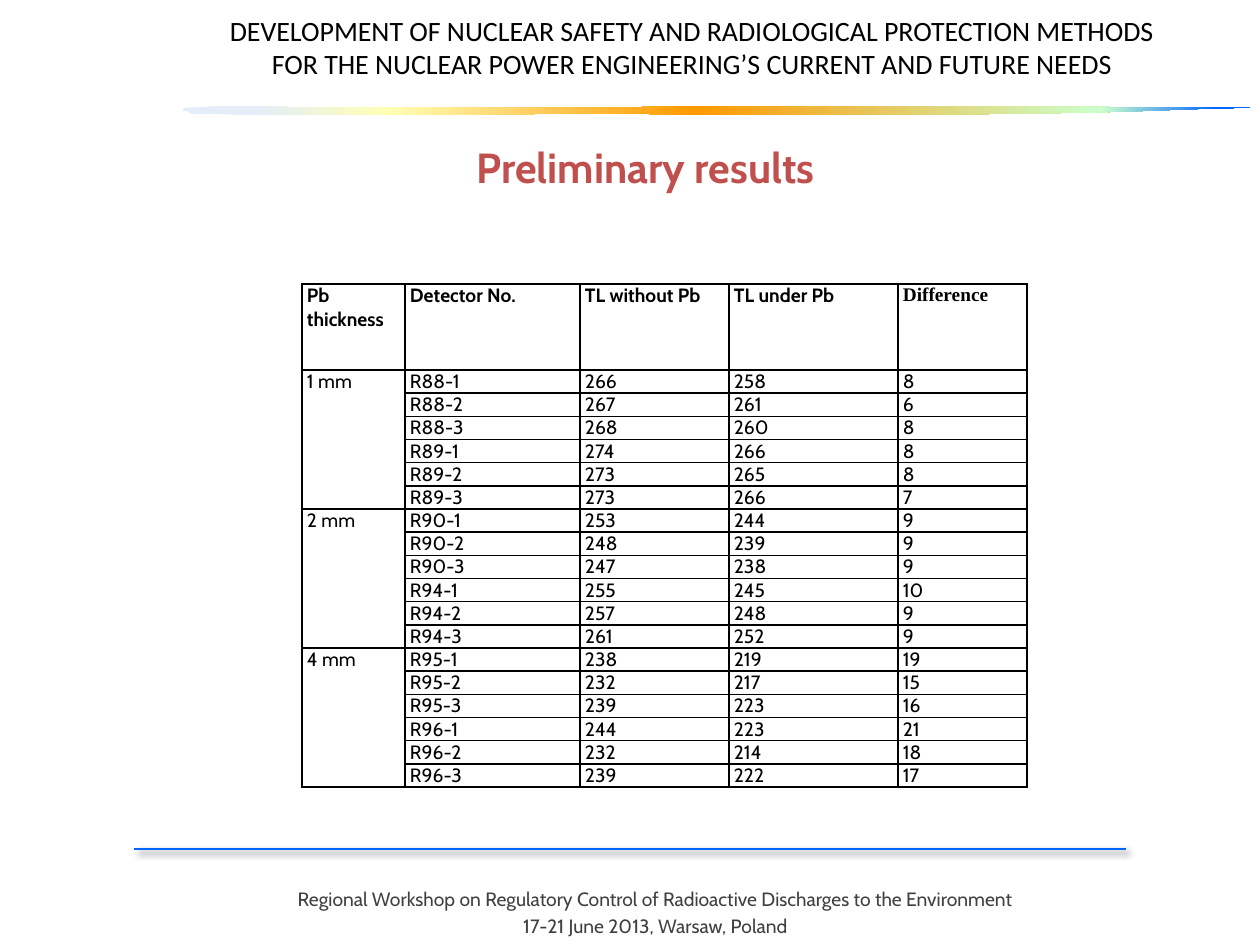
"""Build the slide of preliminary detector results."""
from dataclasses import dataclass

from lxml.etree import SubElement as add_element
from pptx import Presentation
from pptx.dml.color import RGBColor as Color
from pptx.enum.shapes import MSO_CONNECTOR as Connector
from pptx.enum.text import PP_ALIGN as Align
from pptx.oxml import parse_xml
from pptx.oxml.ns import nsdecls, qn
from pptx.util import Pt

PX = 914400 / 126
CURVE_STEPS = 10


@dataclass(frozen=True)
class Theme:
    ink: str = "000000"
    accent: str = "C0504D"
    muted: str = "404040"
    rule: str = "0066FF"
    brush: tuple = ((7, "E4EDF8"), (19, "FFFFB7"), (48, "FF9900"),
                    (86, "CCFFCC"), (97, "0066FF"))
    body_font: str = "Cabin"
    banner_font: str = "Calibri"
    serif_font: str = "Times New Roman"
    small: int = 11
    banner: int = 16
    title: int = 24


def px(length):
    return round(length * PX)


def apply(target, values):
    for name, value in values.items():
        setattr(target, name, value)


def curve_points(start, first, second, end):
    for step in range(1, CURVE_STEPS + 1):
        t = step / CURVE_STEPS
        weights = ((1 - t) ** 3, 3 * t * (1 - t) ** 2, 3 * t * t * (1 - t), t ** 3)
        yield tuple(sum(w * p for w, p in zip(weights, axis))
                    for axis in zip(start, first, second, end))


class SlideBuilder:
    def __init__(self, page, theme):
        self.page = page
        self.theme = theme

    def add_span(self, para, text, size, font, color, align, bold=False):
        para.alignment = align
        span = para.add_run()
        span.text = text
        apply(span.font, {"size": Pt(size), "name": font, "bold": bold})
        span.font.color.rgb = Color.from_string(color)

    def text(self, area, lines, size, font, color, bold=False, gap=0):
        box = self.page.shapes.add_textbox(*map(px, area))
        frame = box.text_frame
        frame.word_wrap = True
        for index, line in enumerate(lines):
            para = frame.add_paragraph() if index else frame.paragraphs[0]
            if index and gap:
                para.space_before = Pt(gap)
            self.add_span(para, line, size, font, color, Align.CENTER, bold)

    def rule(self, start, end, width):
        line = self.page.shapes.add_connector(
            Connector.STRAIGHT, *map(px, start + end))
        line.line.color.rgb = Color.from_string(self.theme.rule)
        line.line.width = Pt(width)
        line._element.spPr.append(parse_xml(
            f'<a:effectLst {nsdecls("a")}><a:outerShdw blurRad="{Pt(4)}" '
            f'dist="{Pt(3)}" dir="2700000" rotWithShape="0">'
            f'<a:srgbClr val="{self.theme.ink}"><a:alpha val="40000"/>'
            '</a:srgbClr></a:outerShdw></a:effectLst>'))

    def brush_stroke(self, start, curves):
        points = [start]
        for curve in curves:
            points.extend(curve_points(points[-1], *curve))
        builder = self.page.shapes.build_freeform(*start, scale=PX)
        builder.add_line_segments(points[1:], close=True)
        stroke = builder.convert_to_shape()
        stroke.shadow.inherit = False
        stroke.line.fill.background()
        stroke.fill.gradient()
        stroke.fill.gradient_angle = 0
        stops = stroke._element.spPr.find(qn("a:gradFill")).find(qn("a:gsLst"))
        stops.clear()
        for position, color in self.theme.brush:
            stop = add_element(stops, qn("a:gs"), pos=str(position * 1000))
            add_element(stop, qn("a:srgbClr"), val=color)

    def border(self, cell):
        properties = cell._tc.get_or_add_tcPr()
        for side in ("lnL", "lnR", "lnT", "lnB"):
            properties.append(parse_xml(
                f'<a:{side} {nsdecls("a")} w="{Pt(1)}"><a:solidFill>'
                f'<a:srgbClr val="{self.theme.ink}"/></a:solidFill></a:{side}>'))

    def table(self, origin, widths, heights, rows, group_size):
        frame = self.page.shapes.add_table(
            len(rows), len(widths), *map(px, (*origin, sum(widths), sum(heights))))
        grid = frame.table
        apply(grid, {"first_row": False, "horz_banding": False})
        for column, width in zip(grid.columns, widths):
            column.width = px(width)
        for row, height in zip(grid.rows, heights):
            row.height = px(height)
        for top in range(1, len(rows), group_size):
            grid.cell(top, 0).merge(grid.cell(top + group_size - 1, 0))
        for r, row in enumerate(rows):
            for c, value in enumerate(row):
                cell = grid.cell(r, c)
                apply(cell, {"margin_left": px(5), "margin_right": px(5),
                             "margin_top": 0, "margin_bottom": 0})
                self.border(cell)
                cell.fill.background()
                if value:
                    font = (self.theme.serif_font if value == "Difference"
                            else self.theme.body_font)
                    self.add_span(cell.text_frame.paragraphs[0], value,
                                  self.theme.small, font, self.theme.ink,
                                  Align.JUSTIFY, bold=r == 0)


HEADINGS = ("Pb thickness", "Detector No.", "TL without Pb", "TL under Pb", "Difference")
READINGS = {
    "1 mm": (("R88", "R89"), ((266, 258, 8), (267, 261, 6), (268, 260, 8),
                              (274, 266, 8), (273, 265, 8), (273, 266, 7))),
    "2 mm": (("R90", "R94"), ((253, 244, 9), (248, 239, 9), (247, 238, 9),
                              (255, 245, 10), (257, 248, 9), (261, 252, 9))),
    "4 mm": (("R95", "R96"), ((238, 219, 19), (232, 217, 15), (239, 223, 16),
                              (244, 223, 21), (232, 214, 18), (239, 222, 17))),
}
BRUSH_START = (1184, 110)
BRUSH_CURVES = (
    ((1232, 108), (1275, 108), (1232, 107)),
    ((1065, 106), (689, 106), (519, 107)),
    ((463, 107), (406, 107), (350, 107)),
    ((302, 107), (238, 106), (214, 106)),
    ((169, 108), (184, 110), (190, 113)),
    ((181, 115), (320, 115), (447, 115)),
    ((572, 113), (843, 116), (945, 115)),
    ((1113, 113), (1137, 111), (1184, 110)),
)


def table_rows():
    rows = [HEADINGS]
    for thickness, (detectors, readings) in READINGS.items():
        for index, values in enumerate(readings):
            series, number = divmod(index, 3)
            rows.append(("" if index else thickness,
                         f"{detectors[series]}-{number + 1}", *map(str, values)))
    return rows


def main():
    deck = Presentation()
    apply(deck, {"slide_width": px(1260), "slide_height": px(945)})
    theme = Theme()
    slide = SlideBuilder(deck.slides.add_slide(deck.slide_layouts[6]), theme)
    slide.rule((134, 849), (1126, 849), 1.5)
    slide.brush_stroke(BRUSH_START, BRUSH_CURVES)
    slide.text((174, 881, 963, 62),
               ("Regional Workshop on Regulatory Control of Radioactive Discharges"
                " to the Environment", "17-21 June 2013, Warsaw, Poland"),
               theme.small, theme.body_font, theme.muted, gap=2.2)
    slide.text((103, 7, 1178, 80),
               ("DEVELOPMENT OF NUCLEAR SAFETY AND RADIOLOGICAL PROTECTION METHODS",
                "FOR THE NUCLEAR POWER ENGINEERING’S CURRENT AND FUTURE NEEDS"),
               theme.banner, theme.banner_font, theme.ink)
    rows = table_rows()
    slide.table((302, 284), (103, 175, 149, 169, 129),
                [86] + [23] * (len(rows) - 1), rows, group_size=6)
    slide.text((31, 135, 1229, 63), ("Preliminary results",),
               theme.title, theme.body_font, theme.accent, bold=True)
    deck.save("out.pptx")


if __name__ == "__main__":
    main()
